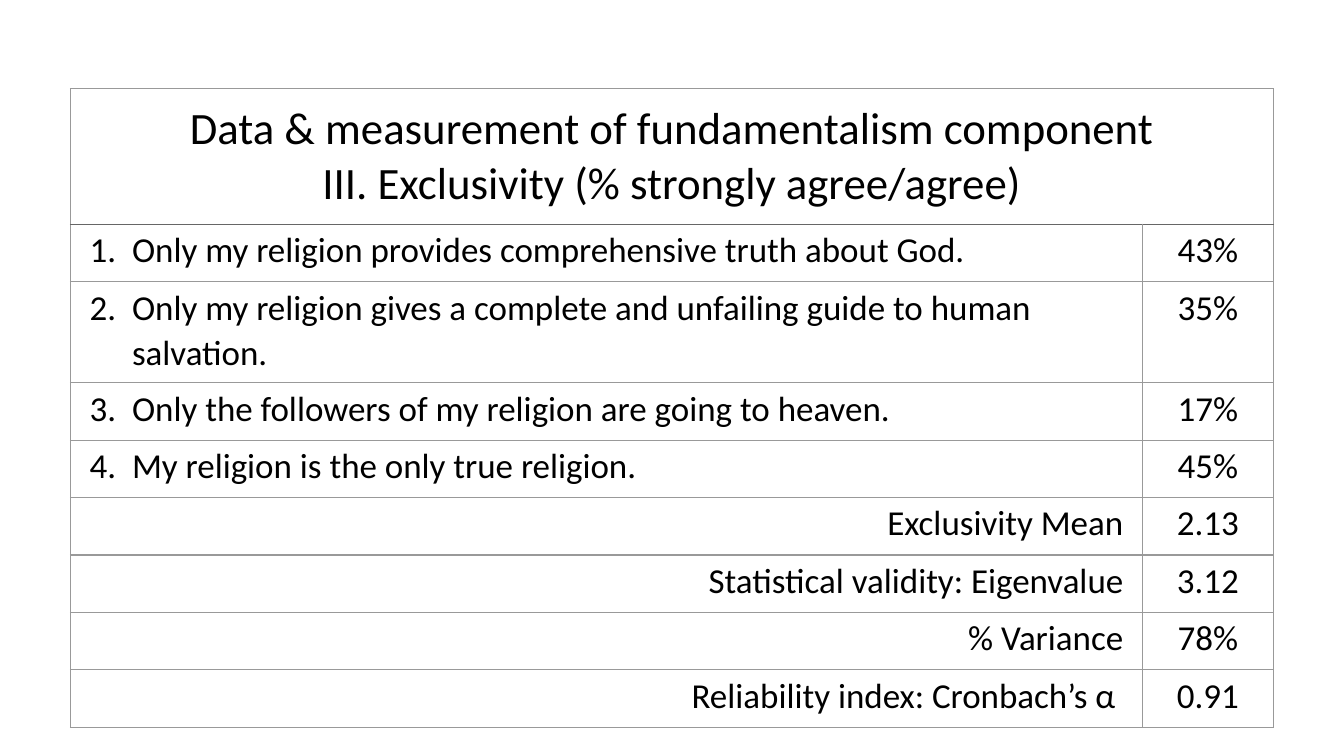
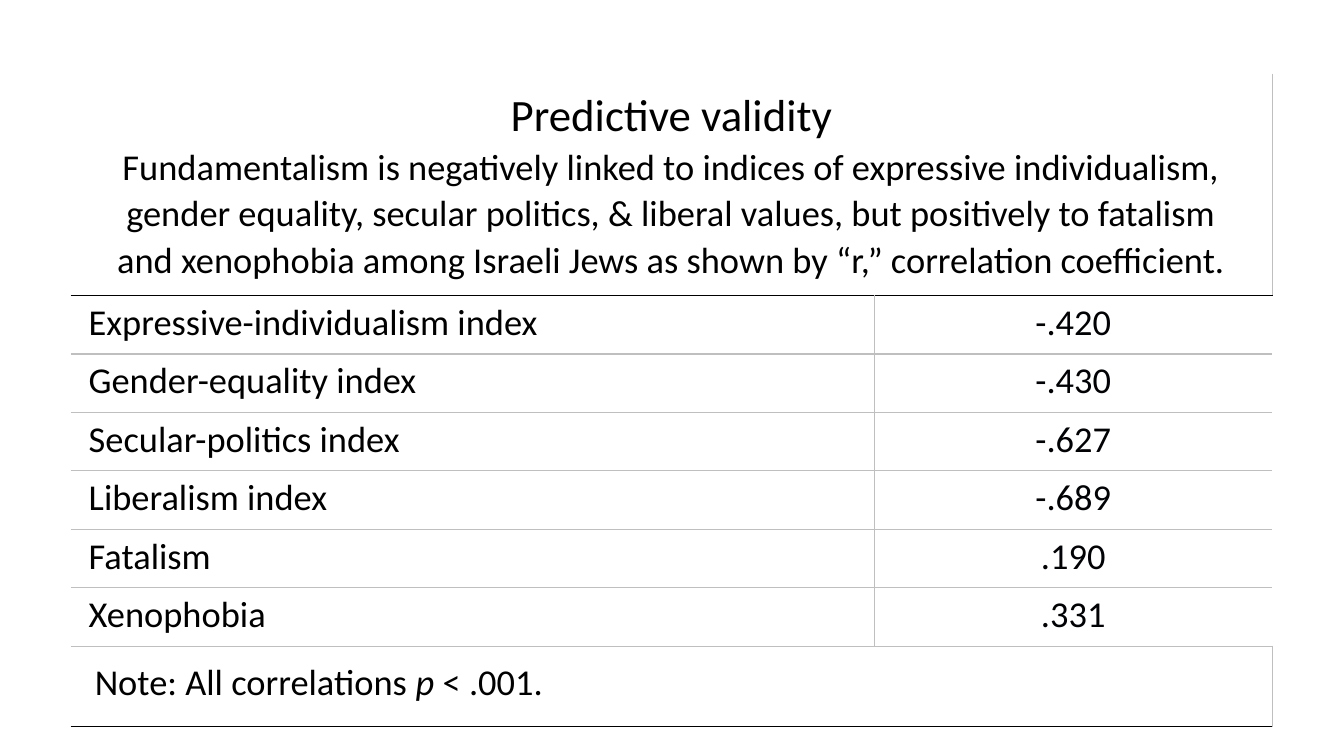
from lxml import etree
from pptx import Presentation
from pptx.dml.color import RGBColor
from pptx.enum.text import PP_ALIGN
from pptx.oxml.ns import qn
from pptx.util import Inches, Pt

FONT = "Calibri"
BLACK = RGBColor(0x00, 0x00, 0x00)
INK = RGBColor(0x01, 0x02, 0x05)
MID_GRAY = RGBColor(0x99, 0x99, 0x99)
DARK_GRAY = RGBColor(0x66, 0x66, 0x66)
LIGHT_GRAY = RGBColor(0xBF, 0xBF, 0xBF)

TITLE_SIZE = 32
LINE_SPACING = 1.05
TABLE_LEFT = 0.7
HANGING = 0.42

EXCLUSIVITY_TITLE = [
    "Data & measurement of fundamentalism component",
    "III. Exclusivity (% strongly agree/agree)",
]
EXCLUSIVITY_ITEMS = [
    ("Only my religion provides comprehensive truth about God.", "43%"),
    ("Only my religion gives a complete and unfailing guide to human salvation.", "35%"),
    ("Only the followers of my religion are going to heaven.", "17%"),
    ("My religion is the only true religion.", "45%"),
]
EXCLUSIVITY_STATISTICS = [
    ("Exclusivity Mean", "2.13"),
    ("Statistical validity: Eigenvalue", "3.12"),
    ("% Variance", "78%"),
    ("Reliability index: Cronbach’s α ", "0.91"),
]

VALIDITY_TITLE = "Predictive validity"
VALIDITY_SUMMARY = (
    "Fundamentalism is negatively linked to indices of expressive individualism, "
    "gender equality, secular politics, & liberal values, but positively to fatalism "
    "and xenophobia among Israeli Jews as shown by “r,” correlation coefficient."
)
CORRELATIONS = [
    ("Expressive-individualism index", "-.420"),
    ("Gender-equality index", "-.430"),
    ("Secular-politics index", "-.627"),
    ("Liberalism index", "-.689"),
    ("Fatalism", ".190"),
    ("Xenophobia", ".331"),
]
NOTE = [("Note: All correlations ", False), ("p", True), (" < .001.", False)]


def write(paragraph, text, size, color=BLACK, align=PP_ALIGN.LEFT,
          spacing=LINE_SPACING, hanging=0):
    """Fill a paragraph with a string, or with (string, italic) pairs."""
    paragraph.alignment = align
    paragraph.line_spacing = spacing
    if hanging:
        properties = paragraph._p.get_or_add_pPr()
        properties.set("marL", str(Inches(hanging)))
        properties.set("indent", str(-Inches(hanging)))
    for words, italic in [(text, False)] if isinstance(text, str) else text:
        run = paragraph.add_run()
        run.text = words
        run.font.name = FONT
        run.font.size = Pt(size)
        run.font.italic = italic
        run.font.color.rgb = color


def format_cell(cell, margins, **borders):
    """Set margins (side, top, bottom) and borders L, R, T, B as (colour, width)."""
    side, top, bottom = margins
    cell.margin_left = cell.margin_right = Inches(side)
    cell.margin_top, cell.margin_bottom = Inches(top), Inches(bottom)
    properties = cell._tc.get_or_add_tcPr()
    for edge in "LRTB":
        line = etree.SubElement(properties, qn(f"a:ln{edge}"))
        if edge not in borders:
            etree.SubElement(line, qn("a:noFill"))
            continue
        color, width = borders[edge]
        line.set("w", str(Pt(width)))
        fill = etree.SubElement(line, qn("a:solidFill"))
        etree.SubElement(fill, qn("a:srgbClr"), val=str(color))
    cell.fill.background()


def add_plain_table(prs, top, widths, heights):
    slide = prs.slides.add_slide(prs.slide_layouts[6])
    table = slide.shapes.add_table(
        len(heights), len(widths), Inches(TABLE_LEFT), Inches(top),
        Inches(sum(widths)), Inches(sum(heights))).table
    table.first_row = table.horz_banding = False
    for column, width in zip(table.columns, widths):
        column.width = Inches(width)
    for row, height in zip(table.rows, heights):
        row.height = Inches(height)
    return table


def merge_row(table, row, margins, **borders):
    first, last = table.cell(row, 0), table.cell(row, 1)
    first.merge(last)
    for cell in (first, last):
        format_cell(cell, margins, **borders)
    return first.text_frame


def add_exclusivity_slide(prs):
    size, margins = 25, (0.19, 0.03, 0)
    grid, rule = (MID_GRAY, 1), (DARK_GRAY, 1.5)
    table = add_plain_table(prs, 0.88, [10.63, 1.3],
                            [1.33, 0.57, 1] + [0.57] * 6)
    title = merge_row(table, 0, (0.25, 0.13, 0.13), L=grid, R=grid, T=grid, B=rule)
    for paragraph, line in zip((title.paragraphs[0], title.add_paragraph()),
                               EXCLUSIVITY_TITLE):
        write(paragraph, line, TITLE_SIZE, align=PP_ALIGN.CENTER, spacing=1.0)

    items = [(f"{number}.\t{item}", value, {"hanging": HANGING})
             for number, (item, value) in enumerate(EXCLUSIVITY_ITEMS, 1)]
    statistics = [(label, value, {"align": PP_ALIGN.RIGHT})
                  for label, value in EXCLUSIVITY_STATISTICS]
    for row, (label, value, layout) in enumerate(items + statistics, 1):
        top = rule if row == 1 else grid
        label_cell, value_cell = table.cell(row, 0), table.cell(row, 1)
        for cell in (label_cell, value_cell):
            format_cell(cell, margins, L=grid, R=grid, T=top, B=grid)
        write(label_cell.text_frame.paragraphs[0], label, size, **layout)
        write(value_cell.text_frame.paragraphs[0], value, size, align=PP_ALIGN.CENTER)


def add_validity_slide(prs):
    size, margins, wide_margins = 26, (0.18, 0.03, 0), (0.24, 0.12, 0.12)
    grid, rule = (LIGHT_GRAY, 1), (BLACK, 1)
    table = add_plain_table(prs, 0.73, [7.97, 3.95],
                            [2.19] + [0.58] * len(CORRELATIONS) + [0.8])
    heading = merge_row(table, 0, wide_margins, R=grid, B=rule)
    write(heading.paragraphs[0], VALIDITY_TITLE, TITLE_SIZE, align=PP_ALIGN.CENTER)
    write(heading.add_paragraph(), VALIDITY_SUMMARY, size, align=PP_ALIGN.CENTER)

    for row, (index, coefficient) in enumerate(CORRELATIONS, 1):
        top = rule if row == 1 else grid
        index_cell, coefficient_cell = table.cell(row, 0), table.cell(row, 1)
        format_cell(index_cell, margins, R=grid, T=top, B=grid)
        format_cell(coefficient_cell, margins, L=grid, T=top, B=grid)
        write(index_cell.text_frame.paragraphs[0], index, size)
        write(coefficient_cell.text_frame.paragraphs[0], coefficient, size,
              color=INK, align=PP_ALIGN.CENTER)

    note = merge_row(table, len(CORRELATIONS) + 1, wide_margins, R=grid, T=grid, B=rule)
    write(note.paragraphs[0], NOTE, size, align=PP_ALIGN.JUSTIFY)


def main():
    prs = Presentation()
    prs.slide_width, prs.slide_height = Inches(13.33), Inches(7.5)
    add_exclusivity_slide(prs)
    add_validity_slide(prs)
    prs.save("out.pptx")


if __name__ == "__main__":
    main()
